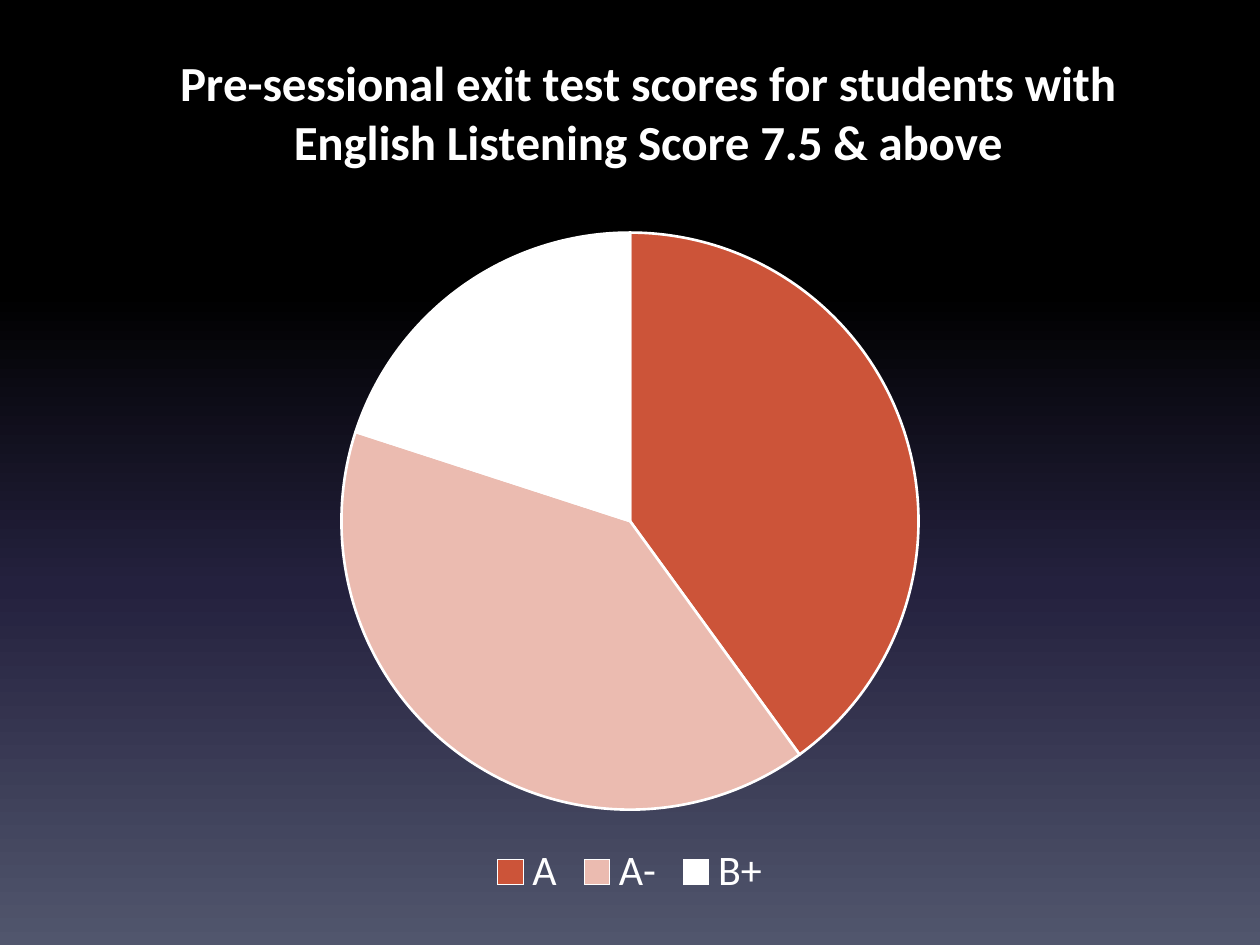
"""Build a slide with a pie chart of pre-sessional exit test scores."""
from lxml.etree import SubElement
from pptx import Presentation
from pptx.chart.data import CategoryChartData
from pptx.dml.color import RGBColor
from pptx.enum.chart import XL_CHART_TYPE as ChartType, XL_LEGEND_POSITION as LegendPosition
from pptx.oxml import parse_xml
from pptx.oxml.ns import nsdecls, qn
from pptx.util import Inches, Pt

TITLE_LINES = ["Pre-sessional exit test scores for students with",
               "English Listening Score 7.5 & above"]
WHITE = RGBColor(0xFF, 0xFF, 0xFF)
RUST = RGBColor(0xCC, 0x54, 0x39)
PINK = RGBColor(0xEB, 0xBB, 0xB0)
BLACK = RGBColor(0x00, 0x00, 0x00)
NAVY = RGBColor(0x24, 0x21, 0x3E)
SLATE = RGBColor(0x51, 0x56, 0x6D)
GRADES = [("A", 40, RUST), ("A-", 40, PINK), ("B+", 20, WHITE)]
BACKGROUND_STOPS = [(0, BLACK), (31, BLACK), (62, NAVY), (100, SLATE)]
TITLE_PLACE = {"x": 0.14, "y": 0.02}
PIE_PLACE = {"x": 0.27, "y": 0.23, "w": 0.46, "h": 0.66}
FONT = "Calibri"


def style_font(font, size, bold=False):
    font.name, font.size, font.bold = FONT, Pt(size), bold
    font.color.rgb = WHITE


def paint_background(page):
    fill = page.background.fill
    fill.gradient()
    fill.gradient_angle = 270
    stops = page.element.find(".//" + qn("a:gsLst"))
    for stop in list(stops):
        stops.remove(stop)
    for percent, color in BACKGROUND_STOPS:
        stop = SubElement(stops, qn("a:gs"), pos=str(percent * 1000))
        SubElement(stop, qn("a:srgbClr"), val=str(color))


def place(element, fractions, inner=False):
    for old in element.findall(qn("c:layout")):
        element.remove(old)
    target = '<c:layoutTarget val="inner"/>' if inner else ""
    modes = "".join(f'<c:{key}Mode val="edge"/>' for key in "xy")
    values = "".join(f'<c:{key} val="{value}"/>' for key, value in fractions.items())
    layout = parse_xml(f'<c:layout {nsdecls("c")}><c:manualLayout>'
                       f'{target}{modes}{values}</c:manualLayout></c:layout>')
    text = element.find(qn("c:tx"))
    element.insert(0 if text is None else element.index(text) + 1, layout)


def add_title(chart):
    frame = chart.chart_title.text_frame
    frame.text = "\n".join(TITLE_LINES)
    for para in frame.paragraphs:
        style_font(para.font, 28, True)
        for span in para.runs:
            style_font(span.font, 28, True)
    chart.chart_title.include_in_layout = False
    place(chart.chart_title._element, TITLE_PLACE)


def add_pie(page):
    data = CategoryChartData()
    data.categories = [grade for grade, _, _ in GRADES]
    data.add_series("Series 1", [share for _, share, _ in GRADES])
    chart = page.shapes.add_chart(ChartType.PIE, 0, Inches(0.25),
                                  Inches(10), Inches(6.94), data).chart
    style_font(chart.font, 10)
    add_title(chart)
    chart.has_legend = True
    chart.legend.position = LegendPosition.BOTTOM
    chart.legend.include_in_layout = False
    style_font(chart.legend.font, 24)
    plot = chart.plots[0]
    plot.vary_by_categories = True
    for index, (_, _, color) in enumerate(GRADES):
        slice_format = plot.series[0].points[index].format
        slice_format.fill.solid()
        slice_format.fill.fore_color.rgb = color
        slice_format.line.color.rgb = WHITE
        slice_format.line.width = Pt(1.5)
    place(chart._chartSpace.find(".//" + qn("c:plotArea")), PIE_PLACE, inner=True)


def main():
    deck = Presentation()
    deck.slide_width, deck.slide_height = Inches(10), Inches(7.5)
    page = deck.slides.add_slide(deck.slide_layouts[6])
    paint_background(page)
    add_pie(page)
    deck.save("out.pptx")


if __name__ == "__main__":
    main()
